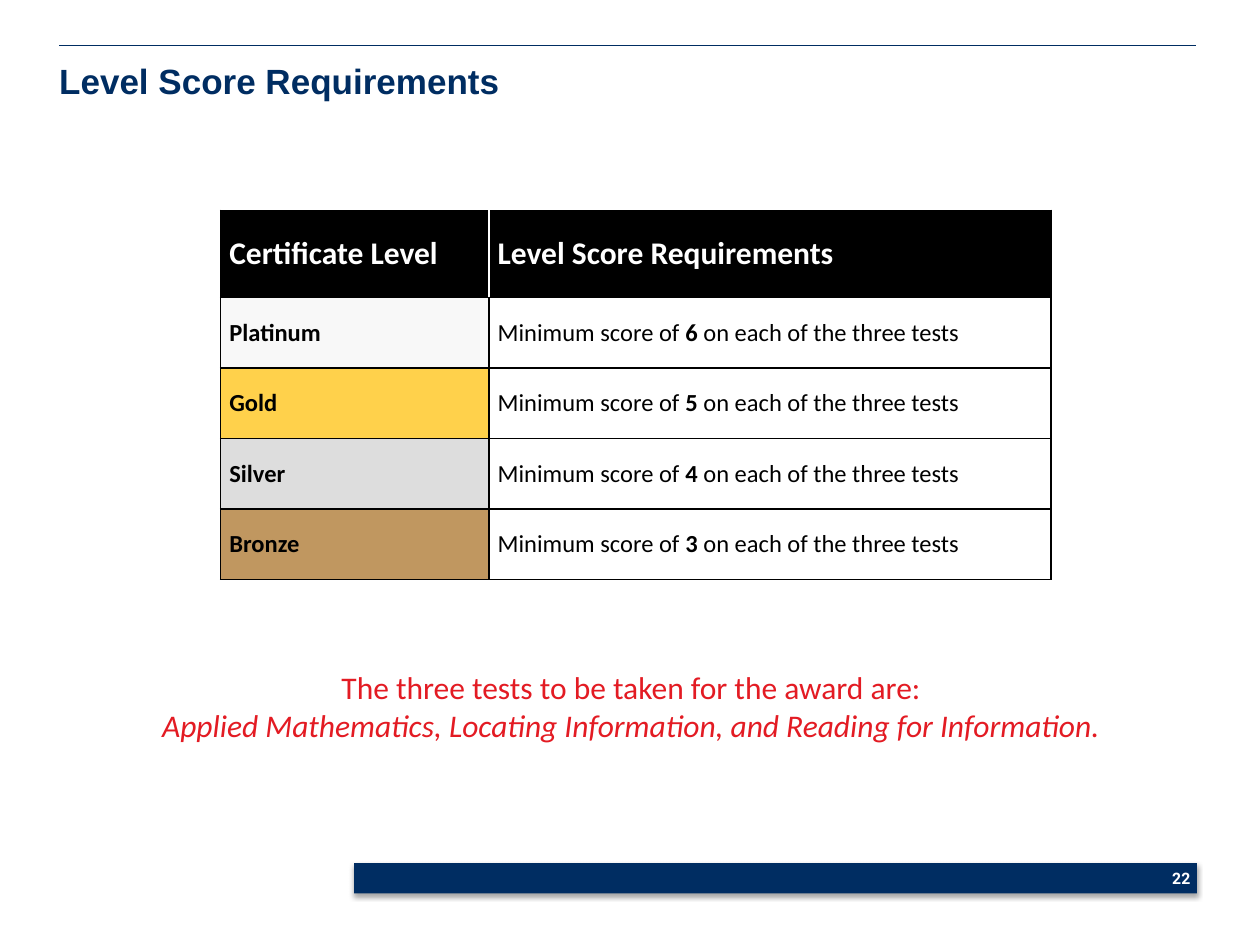
from lxml import etree
from pptx import Presentation
from pptx import util as u
from pptx.dml.color import RGBColor
from pptx.enum import shapes, text
from pptx.oxml.ns import qn

COLORS = {
    "navy": "002D62", "red": "E31B23", "black": "000000", "white": "FFFFFF",
    "platinum": "F8F8F8", "gold": "FFD14B", "silver": "DDDDDD", "bronze": "C09760",
}
LEVELS = [("Platinum", 6), ("Gold", 5), ("Silver", 4), ("Bronze", 3)]


def rgb(name):
    return RGBColor.from_string(COLORS[name])


def add_color(parent, name, alpha=None):
    clr = etree.SubElement(parent, qn("a:srgbClr"), val=COLORS[name])
    if alpha is not None:
        etree.SubElement(clr, qn("a:alpha"), val=str(alpha * 1000))


class Deck:
    """Holds the style and the current slide."""
    body_font = "Calibri"

    def __init__(self, width, height):
        self.prs = Presentation()
        self.prs.slide_width = u.Inches(width)
        self.prs.slide_height = u.Inches(height)
        self.s = self.prs.slides.add_slide(self.prs.slide_layouts[6])

    def run(self, p, words, size, color, bold=False, italic=False, font=body_font):
        r = p.add_run()
        r.text = words
        r.font.name = font
        r.font.size = u.Pt(size)
        r.font.bold = bold
        r.font.italic = italic
        r.font.color.rgb = rgb(color)

    def rule(self, x1, x2, y):
        cx = self.s.shapes.add_connector(
            shapes.MSO_CONNECTOR.STRAIGHT, *map(u.Inches, (x1, y, x2, y)))
        cx.line.color.rgb = rgb("navy")
        cx.line.width = u.Pt(0.5)
        etree.SubElement(cx._element.spPr, qn("a:effectLst"))

    def bar(self, *box):
        sp = self.s.shapes.add_shape(
            shapes.MSO_SHAPE.RECTANGLE, *map(u.Inches, box))
        sp.fill.solid()
        sp.fill.fore_color.rgb = rgb("navy")
        sp.line.fill.background()
        sp.shadow.inherit = False
        effects = sp._element.spPr.find(qn("a:effectLst"))
        shadow = etree.SubElement(
            effects, qn("a:outerShdw"), blurRad=str(u.Pt(3.1)),
            dist=str(u.Pt(1.8)), dir="5400000", algn="t", rotWithShape="0")
        add_color(shadow, "black", 35)

    def textbox(self, *box, align=text.PP_ALIGN.LEFT,
                anchor=text.MSO_ANCHOR.TOP, inset=True):
        """Add a text box and return its first paragraph."""
        tf = self.s.shapes.add_textbox(*map(u.Inches, box)).text_frame
        tf.word_wrap = True
        tf.vertical_anchor = anchor
        if not inset:
            tf.margin_left = tf.margin_right = tf.margin_top = tf.margin_bottom = 0
        p = tf.paragraphs[0]
        p.alignment = align
        return p

    def table(self, left, top, widths, heights):
        tbl = self.s.shapes.add_table(
            len(heights), len(widths), *map(
                u.Inches, (left, top, sum(widths), sum(heights)))).table
        for col, width in zip(tbl.columns, widths):
            col.width = u.Inches(width)
        for row, height in zip(tbl.rows, heights):
            row.height = u.Inches(height)
        return tbl

    def cell(self, cell, fill, runs, size, color, left="black", right="black"):
        """Fill a cell; runs is a list of (words, bold)."""
        cell.vertical_anchor = text.MSO_ANCHOR.MIDDLE
        cell.margin_left = cell.margin_right = u.Inches(0.07)
        cell.margin_top = cell.margin_bottom = 0
        # Borders must come before the fill
        tcPr = cell._tc.get_or_add_tcPr()
        sides = {"L": left, "R": right, "T": "black", "B": "black"}
        for side, name in sides.items():
            ln = etree.SubElement(tcPr, qn("a:ln" + side), w=str(u.Pt(1)))
            add_color(etree.SubElement(ln, qn("a:solidFill")), name)
        cell.fill.solid()
        cell.fill.fore_color.rgb = rgb(fill)
        for words, bold in runs:
            self.run(cell.text_frame.paragraphs[0], words, size, color, bold)


def main():
    d = Deck(10, 7.5)

    # Frame: top rule, footer bar and page number
    d.rule(0.47, 9.49, 0.36)
    d.bar(2.81, 6.85, 6.69, 0.24)
    p = d.textbox(9.25, 6.87, 0.25, 0.21, align=text.PP_ALIGN.CENTER,
                  anchor=text.MSO_ANCHOR.MIDDLE, inset=False)
    p.line_spacing = u.Pt(10)
    d.run(p, "22", 9, "white", bold=True, font="Roboto")

    # Title
    p = d.textbox(0.47, 0.47, 5.63, 0.39, inset=False)
    d.run(p, "Level Score Requirements", 20, "navy", bold=True, font="Arial")

    # Score table
    tbl = d.table(1.75, 1.67, [2.13, 4.46], [0.69] + [0.56] * len(LEVELS))
    d.cell(tbl.cell(0, 0), "black", [("Certificate Level", True)],
           18, "white", right="white")
    d.cell(tbl.cell(0, 1), "black", [("Level Score Requirements", True)],
           18, "white", left="white")
    for row, (level, score) in enumerate(LEVELS, 1):
        d.cell(tbl.cell(row, 0), level.lower(), [(level, True)], 14, "black")
        d.cell(tbl.cell(row, 1), "white",
               [("Minimum score of ", False), (str(score), True),
                (" on each of the three tests", False)], 14, "black")

    # Note on the tests
    p = d.textbox(1.11, 5.25, 7.8, 0.71, align=text.PP_ALIGN.CENTER)
    d.run(p, "The three tests to be taken for the award are:", 18, "red")
    p.add_line_break()
    d.run(p, "Applied Mathematics, Locating Information, and Reading for Information.",
          18, "red", italic=True)

    d.prs.save("out.pptx")


if __name__ == "__main__":
    main()
